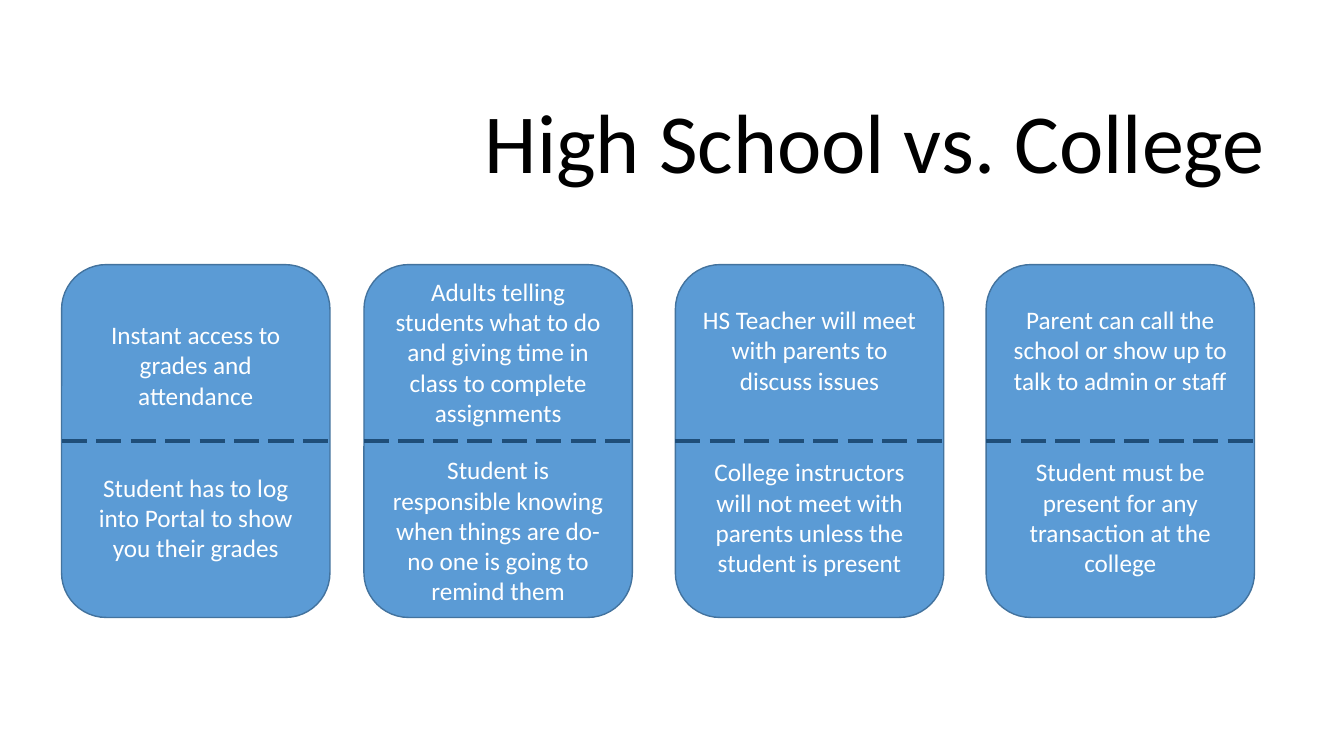
from pptx import Presentation
from pptx.dml.color import RGBColor as Rgb
from pptx.enum.dml import MSO_LINE as Dash
from pptx.enum.shapes import MSO_CONNECTOR as Link, MSO_SHAPE as Form
from pptx.enum.text import MSO_ANCHOR as Anchor, PP_ALIGN as Align
from pptx.util import Inches, Pt
from lxml.etree import SubElement
from pptx.oxml.ns import qn

WIDE, TALL = Inches(13.33), Inches(7.5)
TOP, SPAN, DEPTH = 35, 19.97, 46.67
CARDS = [
    (4.58, 44, "Instant access to grades and attendance",
     "Student has to log into Portal to show you their grades"),
    (27.08, 19.5, "Adults telling students what to do and giving time in class to complete assignments",
     "Student is responsible knowing when things are do- no one is going to remind them"),
    (50.25, 44, "HS Teacher will meet with parents to discuss issues",
     "College instructors will not meet with parents unless the student is present"),
    (73.37, 44, "Parent can call the school or show up to talk to admin or staff",
     "Student must be present for any transaction at the college"),
]


def across(share):
    return round(WIDE * share / 100)


def down(share):
    return round(TALL * share / 100)


def paint(part, tint):
    part.rgb = Rgb.from_string(tint)


def write(para, text, size=18, tint="FFFFFF", align=Align.CENTER, gap=0, lead=1.0):
    para.alignment = align
    para.line_spacing = lead
    para.space_before = Pt(gap)
    run = para.add_run()
    run.text = text
    run.font.name = "Calibri"
    run.font.size = Pt(size)
    paint(run.font.color, tint)


def title(slide, text):
    box = slide.shapes.add_textbox(across(35.34), down(8.4), across(61.8), down(17.6))
    frame = box.text_frame
    frame.word_wrap = True
    frame.vertical_anchor = Anchor.BOTTOM
    write(frame.paragraphs[0], text, size=60, tint="000000", align=Align.LEFT, lead=0.9)


def card(slide, left, gap, school, college):
    box = slide.shapes.add_shape(
        Form.ROUNDED_RECTANGLE, across(left), down(TOP), across(SPAN), down(DEPTH))
    box.shadow.inherit = False
    box.fill.solid()
    paint(box.fill.fore_color, "5B9BD5")
    paint(box.line.color, "43739E")
    box.line.width = Pt(1)
    frame = box.text_frame
    frame.word_wrap = True
    frame.vertical_anchor = Anchor.MIDDLE
    write(frame.paragraphs[0], school)
    write(frame.add_paragraph(), college, gap=gap)


def split(slide, left):
    mid = down(TOP + DEPTH / 2)
    rule = slide.shapes.add_connector(
        Link.STRAIGHT, across(left), mid, across(left + SPAN), mid)
    paint(rule.line.color, "1F4E79")
    rule.line.width = Pt(2.25)
    rule.line.dash_style = Dash.LONG_DASH
    SubElement(rule.element.spPr, qn("a:effectLst"))


def main():
    deck = Presentation()
    deck.slide_width, deck.slide_height = WIDE, TALL
    slide = deck.slides.add_slide(deck.slide_layouts[6])
    title(slide, "High School vs. College")
    for left, gap, school, college in CARDS:
        card(slide, left, gap, school, college)
        split(slide, left)
    deck.save("out.pptx")


if __name__ == "__main__":
    main()
